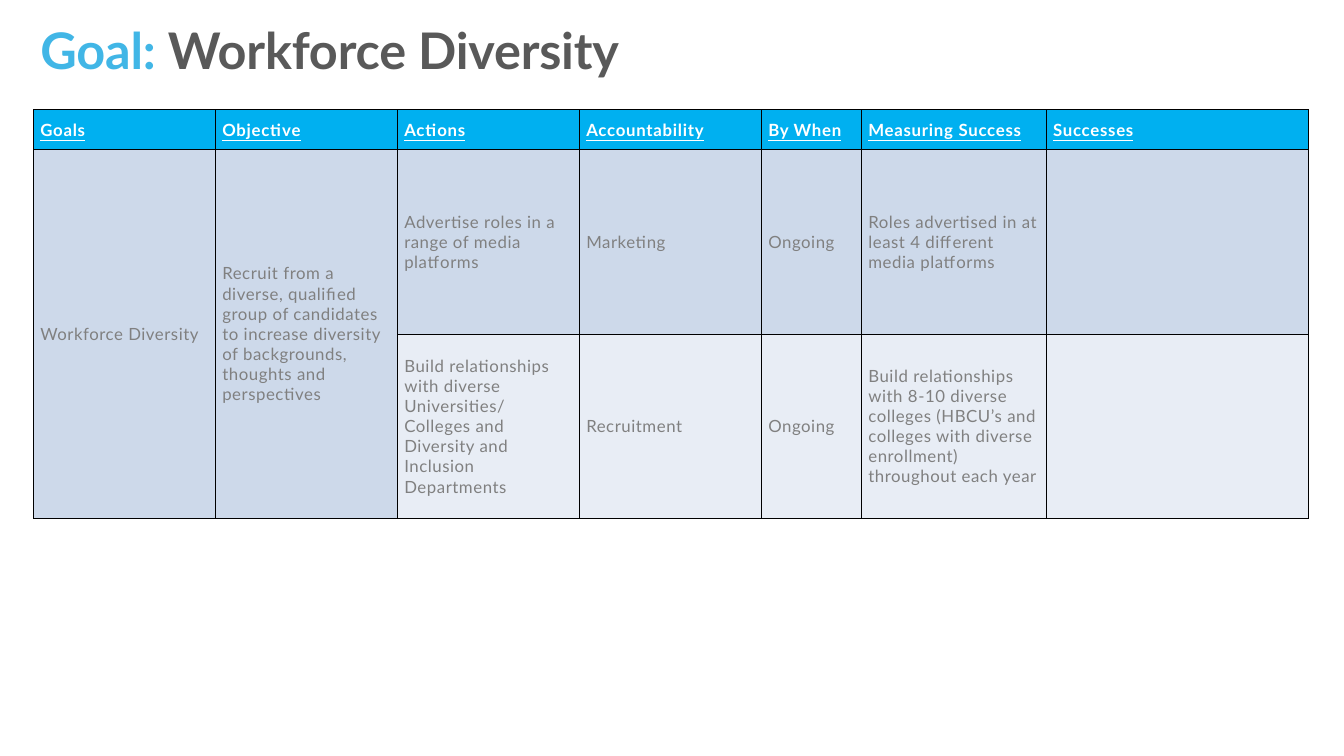
from lxml.etree import SubElement
from pptx import Presentation
from pptx.dml.color import RGBColor
from pptx.enum.text import MSO_ANCHOR, MSO_AUTO_SIZE
from pptx.oxml.ns import qn
from pptx.util import Inches, Pt

COLORS = {
    "accent": "41B6E6",
    "title": "595959",
    "header": "00B0F0",
    "header_text": "FFFFFF",
    "body_text": "808080",
    "first_row": "CDD9EA",
    "second_row": "E8EDF5",
    "border": "000000",
}
FONT = "Lato"
COLUMN_WIDTHS = [2.71, 2.71, 2.71, 2.71, 1.49, 2.75, 3.9]
ROW_HEIGHTS = [0.6, 2.74, 2.74]
ROW_FILLS = ["header", "first_row", "second_row"]
MERGED_COLUMNS = [0, 1]
ROWS = [
    ["Goals", "Objective", "Actions", "Accountability", "By When",
     "Measuring Success", "Successes"],
    ["Workforce Diversity",
     "Recruit from a diverse, qualified group of candidates\n"
     "to increase diversity\n"
     "of backgrounds, thoughts and perspectives",
     "Advertise roles in a range of media platforms",
     "Marketing", "Ongoing",
     "Roles advertised in at least 4 different media platforms", ""],
    ["", "",
     "Build relationships with diverse Universities/\n"
     "Colleges and Diversity and Inclusion Departments",
     "Recruitment", "Ongoing",
     "Build relationships with 8-10 diverse colleges (HBCU’s and colleges "
     "with diverse enrollment) throughout each year", ""],
]


def color(name):
    """Return the named palette colour."""
    return RGBColor.from_string(COLORS[name])


def set_spacing(paragraph, points):
    """Set the letter spacing of every run in a paragraph."""
    for run in paragraph.runs:
        run.font._element.set("spc", str(round(points * 100)))


def add_title(slide, left, top, width, height):
    """Add the two-colour title in the given box."""
    box = slide.shapes.add_textbox(
        Inches(left), Inches(top), Inches(width), Inches(height))
    frame = box.text_frame
    frame.word_wrap = True
    frame.auto_size = MSO_AUTO_SIZE.SHAPE_TO_FIT_TEXT
    frame.margin_left = frame.margin_right = 0
    frame.margin_top = frame.margin_bottom = 0
    paragraph = frame.paragraphs[0]
    paragraph.line_spacing = Pt(64.8)
    paragraph.font.name = FONT
    paragraph.font.size = Pt(54)
    paragraph.font.bold = True
    for text, color_name in [("Goal: ", "accent"), ("Workforce Diversity", "title")]:
        run = paragraph.add_run()
        run.text = text
        run.font.color.rgb = color(color_name)
    set_spacing(paragraph, -0.2)


def add_borders(cell):
    """Draw a thin line on each side of a cell."""
    properties = cell._tc.get_or_add_tcPr()
    for position, side in enumerate(["lnL", "lnR", "lnT", "lnB"]):
        line = SubElement(properties, qn(f"a:{side}"), w=str(Pt(1)))
        fill = SubElement(line, qn("a:solidFill"))
        SubElement(fill, qn("a:srgbClr"), val=COLORS["border"])
        properties.insert(position, line)


def fill_cell(cell, text, fill_name, is_header):
    """Write and format one table cell."""
    cell.fill.solid()
    cell.fill.fore_color.rgb = color(fill_name)
    add_borders(cell)
    cell.vertical_anchor = MSO_ANCHOR.MIDDLE
    cell.margin_left = cell.margin_right = Inches(0.1)
    cell.margin_top = cell.margin_bottom = Inches(0.1)
    cell.text = text
    for paragraph in cell.text_frame.paragraphs:
        paragraph.line_spacing = Pt(21.6)
        font = paragraph.font
        font.name = FONT
        font.size = Pt(18)
        font.bold = is_header
        font.underline = is_header
        font.color.rgb = color("header_text" if is_header else "body_text")
        set_spacing(paragraph, 0.8 if is_header else 0.6)


def add_goal_table(slide, left, top, width, height):
    """Add the action plan table in the given box."""
    table = slide.shapes.add_table(
        len(ROWS), len(COLUMN_WIDTHS),
        Inches(left), Inches(top), Inches(width), Inches(height)).table
    for column, share in zip(table.columns, COLUMN_WIDTHS):
        column.width = Inches(width * share / sum(COLUMN_WIDTHS))
    for row, share in zip(table.rows, ROW_HEIGHTS):
        row.height = Inches(height * share / sum(ROW_HEIGHTS))
    for row_index, (texts, fill_name) in enumerate(zip(ROWS, ROW_FILLS)):
        for column_index, text in enumerate(texts):
            fill_cell(table.cell(row_index, column_index), text, fill_name,
                      row_index == 0)
    for column_index in MERGED_COLUMNS:
        table.cell(1, column_index).merge(table.cell(2, column_index))


def main():
    """Build and save the presentation."""
    presentation = Presentation()
    presentation.slide_width = Inches(20)
    presentation.slide_height = Inches(11.25)
    slide = presentation.slides.add_slide(presentation.slide_layouts[6])
    add_title(slide, 0.6, 0.28, 16.89, 1.1)
    add_goal_table(slide, 0.5, 1.63, 18.97, 6.08)
    presentation.save("out.pptx")


if __name__ == "__main__":
    main()
